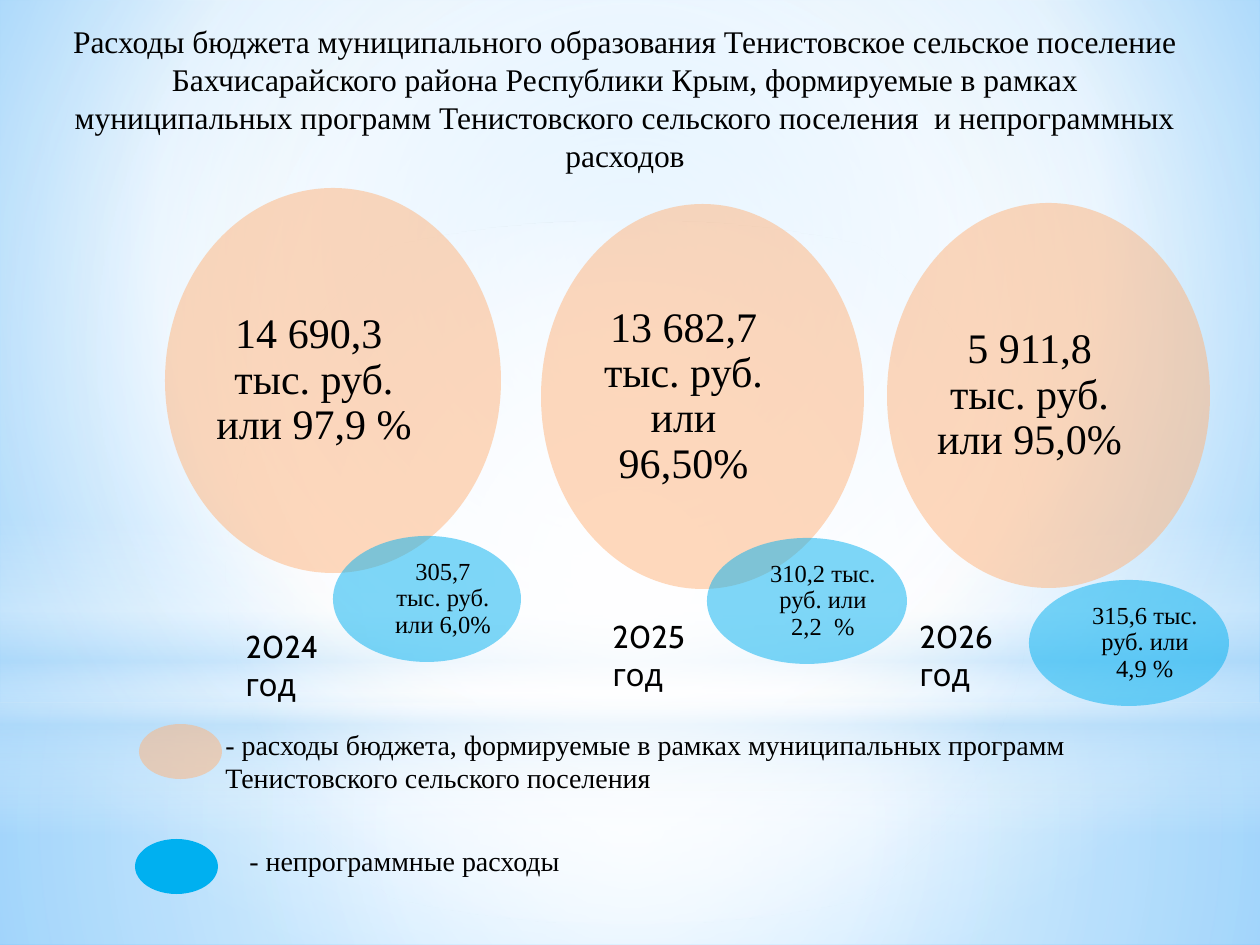
from lxml import etree
from pptx import Presentation
from pptx.dml.color import RGBColor
from pptx.enum.shapes import MSO_SHAPE
from pptx.enum.text import MSO_ANCHOR, PP_ALIGN
from pptx.oxml.ns import qn
from pptx.util import Emu, Pt

RECT, OVAL = MSO_SHAPE.RECTANGLE, MSO_SHAPE.OVAL
LEFT, CENTER = PP_ALIGN.LEFT, PP_ALIGN.CENTER
TOP, MIDDLE = MSO_ANCHOR.TOP, MSO_ANCHOR.MIDDLE
SCALE = 914400 / 126
SERIF, SANS = "Times New Roman", "Cabin"
COLORS = {"text": "000000", "peach": "FFB37A", "blue": "00B0F0",
          "white": "FFFFFF", "haze": "B4DCFA", "sky": "9ED5FF", "deep": "5BB9FF"}


def px(n):
    return Emu(round(n * SCALE))


def write(frame, text, size=18, font=SERIF, align=LEFT, anchor=TOP, space=None):
    frame.word_wrap = True
    frame.vertical_anchor = anchor
    para = frame.paragraphs[0]
    para.alignment = align
    para.line_spacing = space
    run = para.add_run()
    run.text = text
    run.font.size = Pt(size)
    run.font.name = font
    run.font.color.rgb = RGBColor.from_string(COLORS["text"])


def add(parent, tag, **attrs):
    return etree.SubElement(parent, qn(tag), {k: str(v) for k, v in attrs.items()})


def blend(root, stops, focus=None):
    """Turn the solid fill under root into a gradient: radial to focus, or downward."""
    solid = root.find(".//" + qn("a:solidFill"))
    grad = etree.Element(qn("a:gradFill"), rotWithShape="1")
    marks = add(grad, "a:gsLst")
    for pos, color, alpha in stops:
        stop = add(marks, "a:gs", pos=pos * 1000)
        tint = add(stop, "a:srgbClr", val=COLORS[color])
        add(tint, "a:alpha", val=alpha * 1000)
    if focus:
        way = add(grad, "a:path", path="circle")
        add(way, "a:fillToRect", **{k: v * 1000 for k, v in zip("ltrb", focus)})
    else:
        add(grad, "a:lin", ang=90 * 60000, scaled=0)
    solid.getparent().replace(solid, grad)


class Page:
    def __init__(self, deck):
        self.slide = deck.slides.add_slide(deck.slide_layouts[6])

    def back(self, stops, focus):
        self.slide.background.fill.solid()
        blend(self.slide.element, stops, focus)

    def shape(self, kind, box, color, alpha=100):
        item = self.slide.shapes.add_shape(kind, *map(px, box))
        item.shadow.inherit = False
        item.line.fill.background()
        item.fill.solid()
        item.fill.fore_color.rgb = RGBColor.from_string(COLORS[color])
        if alpha < 100:
            tint = item.element.spPr.find(".//" + qn("a:srgbClr"))
            add(tint, "a:alpha", val=alpha * 1000)
        return item

    def glow(self, kind, box, stops, focus=None):
        blend(self.shape(kind, box, "white").element.spPr, stops, focus)

    def bubble(self, box, color, text, size, inset):
        frame = self.shape(OVAL, box, color, 50).text_frame
        frame.margin_left, frame.margin_right = map(px, inset)
        frame.margin_top = frame.margin_bottom = 0
        write(frame, text, size=size, align=CENTER, anchor=MIDDLE, space=0.9)

    def label(self, box, text, **style):
        write(self.slide.shapes.add_textbox(*map(px, box)).text_frame, text, **style)


def main():
    deck = Presentation()
    deck.slide_width, deck.slide_height = px(1260), px(945)
    page = Page(deck)

    # Background with layers of light
    mid = (50, 50, 50, 50)
    page.back([(0, "sky", 100), (60, "white", 100), (100, "deep", 100)],
              (20, 10, 20, 60))
    page.glow(RECT, (0, 703, 1260, 242),
              [(0, "white", 91), (37, "white", 76), (100, "haze", 79)], mid)
    page.glow(RECT, (0, 0, 1260, 703),
              [(0, "white", 89), (48, "white", 62), (100, "haze", 79)], mid)
    page.glow(RECT, (0, 519, 1260, 315),
              [(0, "white", 0), (29, "white", 30), (45, "haze", 40),
               (55, "white", 26), (65, "haze", 60), (100, "white", 0)])
    page.glow(OVAL, (0, 221, 1260, 703),
              [(0, "white", 100), (56, "white", 0)], mid)

    # Title
    page.label((54, 16, 1142, 165),
               "Расходы бюджета муниципального образования Тенистовское сельское "
               "поселение Бахчисарайского района Республики Крым, формируемые в "
               "рамках муниципальных программ Тенистовского сельского поселения  "
               "и непрограммных расходов", align=CENTER)

    # Years: program share, other share, caption
    years = [
        ("2024 год", (233, 621, 139, 89),
         (165, 188, 336, 385), "14 690,3  тыс. руб. или 97,9 %",
         (333, 536, 188, 126), "305,7 тыс. руб. или 6,0%"),
        ("2025 год", (600, 611, 102, 89),
         (541, 204, 323, 385), "13 682,7 тыс. руб. или 96,50%",
         (707, 538, 200, 126), "310,2 тыс. руб. или 2,2  %"),
        ("2026 год", (907, 611, 139, 89),
         (887, 203, 323, 385), "5 911,8 тыс. руб. или 95,0%",
         (1029, 580, 200, 126), "315,6 тыс. руб. или 4,9 %"),
    ]
    for year, spot, big, main_sum, small, other_sum in years:
        page.bubble(big, "peach", main_sum, 24, (0, 38))
        page.bubble(small, "blue", other_sum, 14, (33, 1))
        page.label(spot, year, font=SANS)

    # Legend
    page.shape(OVAL, (139, 724, 83, 55), "peach", 50)
    page.label((213, 721, 973, 81),
               "- расходы бюджета, формируемые в рамках муниципальных программ "
               "Тенистовского сельского поселения", size=16)
    page.shape(OVAL, (135, 839, 83, 55), "blue")
    page.label((237, 837, 853, 47), "- непрограммные расходы", size=16)

    deck.save("out.pptx")


if __name__ == "__main__":
    main()
